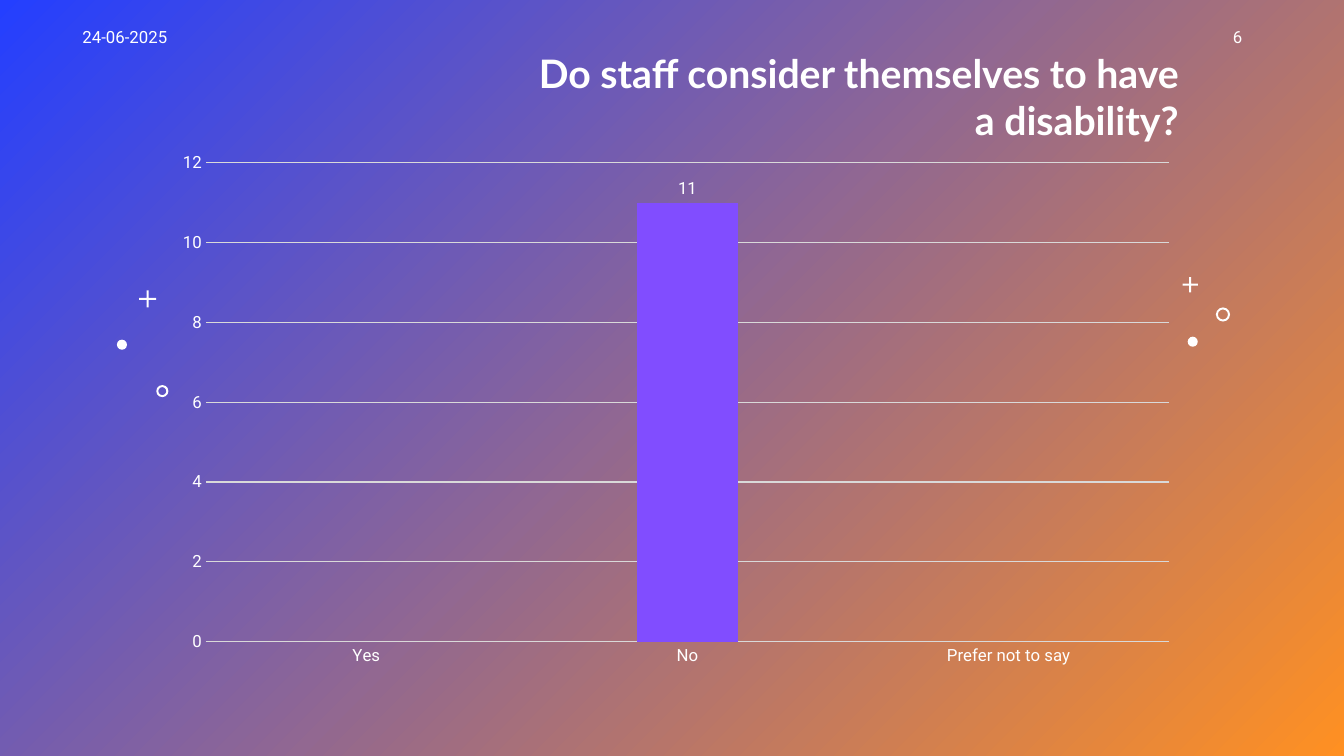
from dataclasses import dataclass

from pptx import Presentation
from pptx.chart.data import CategoryChartData
from pptx.dml.color import RGBColor
from pptx.enum.chart import XL_CHART_TYPE as ChartType, XL_LABEL_POSITION as LabelPosition
from pptx.enum.chart import XL_TICK_MARK as TickMark
from pptx.enum.shapes import MSO_SHAPE as Preset
from pptx.enum.text import MSO_ANCHOR as Anchor, PP_ALIGN as Align
from pptx.util import Inches, Pt

TITLE = "Do staff consider themselves to have a disability?"
TITLE_BOX = (5.06, 0.44, 6.73, 1.04)
HEADER = [
    ("24-06-2025", 0.72, Align.LEFT),
    ("6", 9.42, Align.RIGHT),
]
ANSWERS = {"Yes": None, "No": 11, "Prefer not to say": None}
CHART_BOX = (1.61, 1.41, 10.19, 5.3)
ORNAMENTS = [
    ("dot", 11.78, 3.34, 0.1),
    ("plus", 11.73, 2.75, 0.15),
    ("ring", 12.06, 3.05, 0.14),
    ("plus", 1.38, 2.88, 0.17),
    ("dot", 1.16, 3.37, 0.1),
    ("ring", 1.55, 3.82, 0.12),
]
PRESETS = {"dot": Preset.OVAL, "plus": Preset.CROSS, "ring": Preset.DONUT}
STROKE = 0.02


@dataclass(frozen=True)
class Theme:
    start: RGBColor = RGBColor.from_string("243FFF")
    end: RGBColor = RGBColor.from_string("FF9022")
    text: RGBColor = RGBColor.from_string("FFFFFF")
    grid: RGBColor = RGBColor.from_string("D9D9D9")
    bar: RGBColor = RGBColor.from_string("814DFF")
    heading: str = "Lato"
    body: str = "Roboto"
    title_size: int = 28
    body_size: int = 12
    line_width: float = 0.75


THEME = Theme()


def style_font(font, name=THEME.body, size=THEME.body_size, bold=False):
    font.name, font.size, font.bold = name, Pt(size), bold
    font.color.rgb = THEME.text


def style_line(line):
    line.color.rgb = THEME.grid
    line.width = Pt(THEME.line_width)


def paint_background(slide):
    fill = slide.background.fill
    fill.gradient()
    fill.gradient_angle = 315
    for stop, color, position in zip(fill.gradient_stops, (THEME.start, THEME.end), (0, 1)):
        stop.color.rgb = color
        stop.position = position


def write_text(shape, text, alignment, **font):
    frame = shape.text_frame
    frame.text = text
    frame.word_wrap = True
    frame.vertical_anchor = Anchor.TOP
    paragraph = frame.paragraphs[0]
    paragraph.alignment = alignment
    style_font(paragraph.runs[0].font, **font)


def add_title(slide):
    title = slide.shapes.title
    title.left, title.top, title.width, title.height = map(Inches, TITLE_BOX)
    write_text(title, TITLE, Align.RIGHT, name=THEME.heading, size=THEME.title_size, bold=True)


def add_ornament(slide, kind, left, top, size):
    shape = slide.shapes.add_shape(PRESETS[kind], *map(Inches, (left, top, size, size)))
    shape.shadow.inherit = False
    shape.fill.solid()
    shape.fill.fore_color.rgb = THEME.text
    shape.line.fill.background()
    if kind == "plus":
        shape.adjustments[0] = (1 - STROKE / size) / 2
    elif kind == "ring":
        shape.adjustments[0] = STROKE / size


def add_answer_chart(slide):
    data = CategoryChartData()
    data.categories = list(ANSWERS)
    data.add_series("Series 1", list(ANSWERS.values()))
    frame = slide.shapes.add_chart(ChartType.COLUMN_CLUSTERED, *map(Inches, CHART_BOX), data)
    chart = frame.chart
    chart.has_title = chart.has_legend = False
    style_font(chart.font)

    for axis in (chart.category_axis, chart.value_axis):
        axis.major_tick_mark = axis.minor_tick_mark = TickMark.NONE
        style_font(axis.tick_labels.font)
    style_line(chart.category_axis.format.line)
    values = chart.value_axis
    values.minimum_scale, values.maximum_scale, values.major_unit = 0, 12, 2
    values.format.line.fill.background()
    style_line(values.major_gridlines.format.line)

    plot = chart.plots[0]
    plot.gap_width, plot.overlap = 219, -27
    plot.vary_by_categories = False
    series = plot.series[0]
    series.format.fill.solid()
    series.format.fill.fore_color.rgb = THEME.bar
    labels = series.data_labels
    labels.show_value = True
    labels.position = LabelPosition.OUTSIDE_END
    style_font(labels.font)


def main():
    """Build the staff disability survey slide."""
    presentation = Presentation()
    presentation.slide_width, presentation.slide_height = Inches(13.33), Inches(7.5)
    slide = presentation.slides.add_slide(presentation.slide_layouts[5])
    paint_background(slide)
    for ornament in ORNAMENTS:
        add_ornament(slide, *ornament)
    add_answer_chart(slide)
    add_title(slide)
    for text, left, alignment in HEADER:
        box = slide.shapes.add_textbox(*map(Inches, (left, 0.22, 3, 0.4)))
        write_text(box, text, alignment)
    presentation.save("out.pptx")


if __name__ == "__main__":
    main()
